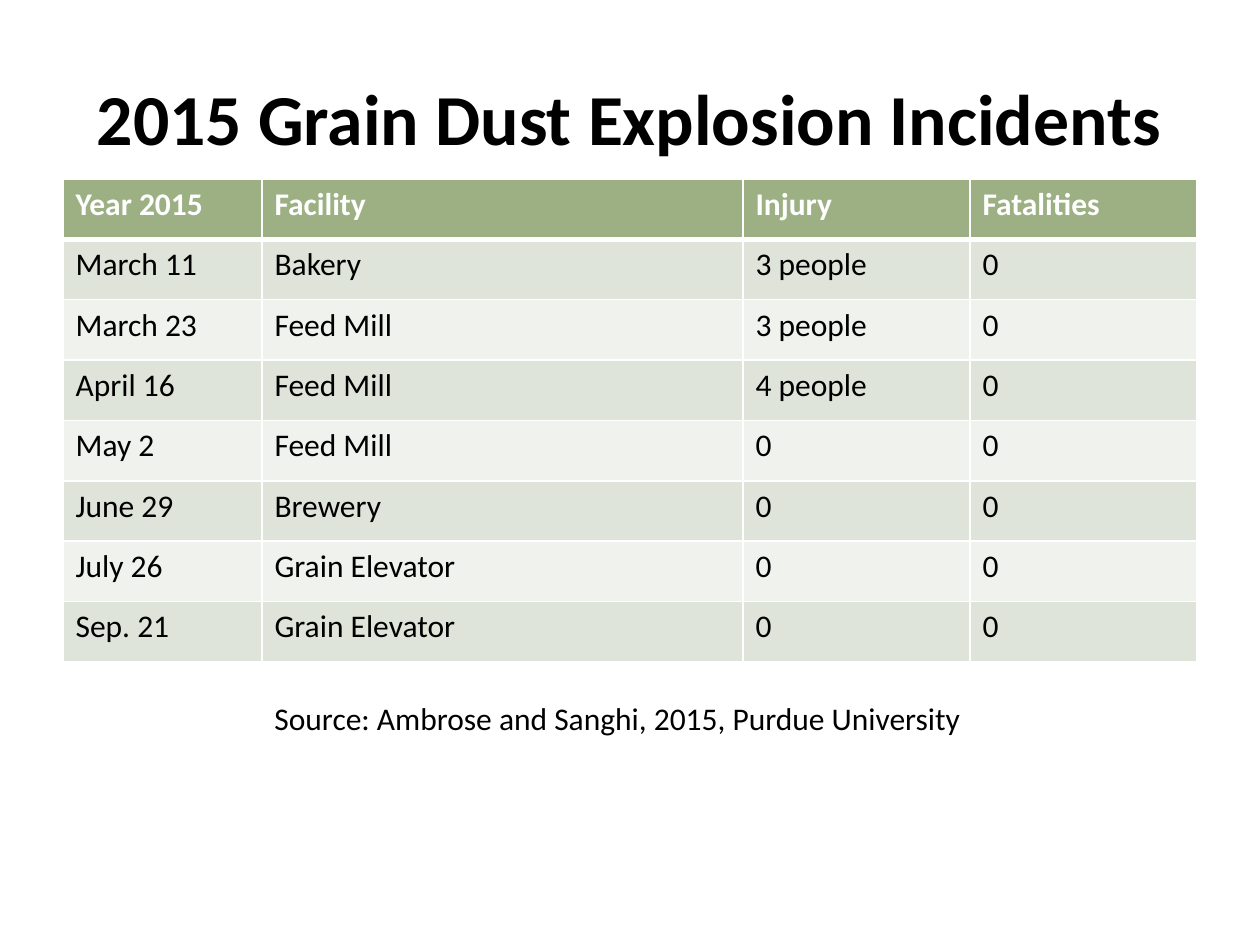
from lxml.etree import SubElement
from pptx import Presentation
from pptx.dml.color import RGBColor
from pptx.enum.text import MSO_ANCHOR, PP_ALIGN
from pptx.oxml.ns import qn
from pptx.util import Pt

TITLE = "2015 Grain Dust Explosion Incidents"
SOURCE = "Source: Ambrose and Sanghi, 2015, Purdue University"
INCIDENTS = [
    ("Year 2015", "Facility", "Injury", "Fatalities"),
    ("March 11", "Bakery", "3 people", "0"),
    ("March 23", "Feed Mill", "3 people", "0"),
    ("April 16", "Feed Mill", "4 people", "0"),
    ("May 2", "Feed Mill", "0", "0"),
    ("June 29", "Brewery", "0", "0"),
    ("July 26", "Grain Elevator", "0", "0"),
    ("Sep. 21", "Grain Elevator", "0", "0"),
]
COLUMN_WIDTHS = [199, 481, 227, 227]
TABLE_HEIGHT = 483
COLORS = {"black": "000000", "white": "FFFFFF", "header": "9CB084",
          "odd": "DEE4D9", "even": "EFF2ED"}


def px(n):
    return round(n * 914400 / 126)


def color(name):
    return RGBColor.from_string(COLORS[name])


def write(tf, text, size=18, bold=False, ink="black", align=PP_ALIGN.LEFT):
    p = tf.paragraphs[0]
    p.alignment = align
    r = p.add_run()
    r.text = text
    r.font.name = "Calibri"
    r.font.size = Pt(size)
    r.font.bold = bold
    r.font.color.rgb = color(ink)


def add_borders(cell, **widths):
    """Draw white cell edges; widths maps L, R, T, B to points."""
    tc_pr = cell._tc.get_or_add_tcPr()
    for side, width in widths.items():
        ln = SubElement(tc_pr, qn(f"a:ln{side}"), w=str(Pt(width)))
        fill = SubElement(ln, qn("a:solidFill"))
        SubElement(fill, qn("a:srgbClr"), val=COLORS["white"])


prs = Presentation()
prs.slide_width, prs.slide_height = px(1260), px(945)
s = prs.slides.add_slide(prs.slide_layouts[5])

title = s.shapes.title
title.left, title.top, title.width, title.height = px(63), px(38), px(1134), px(157)
title.text_frame.vertical_anchor = MSO_ANCHOR.MIDDLE
write(title.text_frame, TITLE, size=41, bold=True, align=PP_ALIGN.CENTER)

table = s.shapes.add_table(len(INCIDENTS), len(COLUMN_WIDTHS), px(63), px(179),
                           px(sum(COLUMN_WIDTHS)), px(TABLE_HEIGHT)).table
for column, width in zip(table.columns, COLUMN_WIDTHS):
    column.width = px(width)
for i, incident in enumerate(INCIDENTS):
    table.rows[i].height = px(TABLE_HEIGHT / len(INCIDENTS))
    header = i == 0
    band = "header" if header else "odd" if i % 2 else "even"
    for j, text in enumerate(incident):
        cell = table.cell(i, j)
        add_borders(cell, L=1, R=1, T=3 if i == 1 else 1, B=3 if header else 1)
        cell.fill.solid()
        cell.fill.fore_color.rgb = color(band)
        write(cell.text_frame, text, bold=header, ink="white" if header else "black")

source = s.shapes.add_textbox(px(262), px(693), px(735), px(50))
source.text_frame.word_wrap = True
write(source.text_frame, SOURCE)

prs.save("out.pptx")
